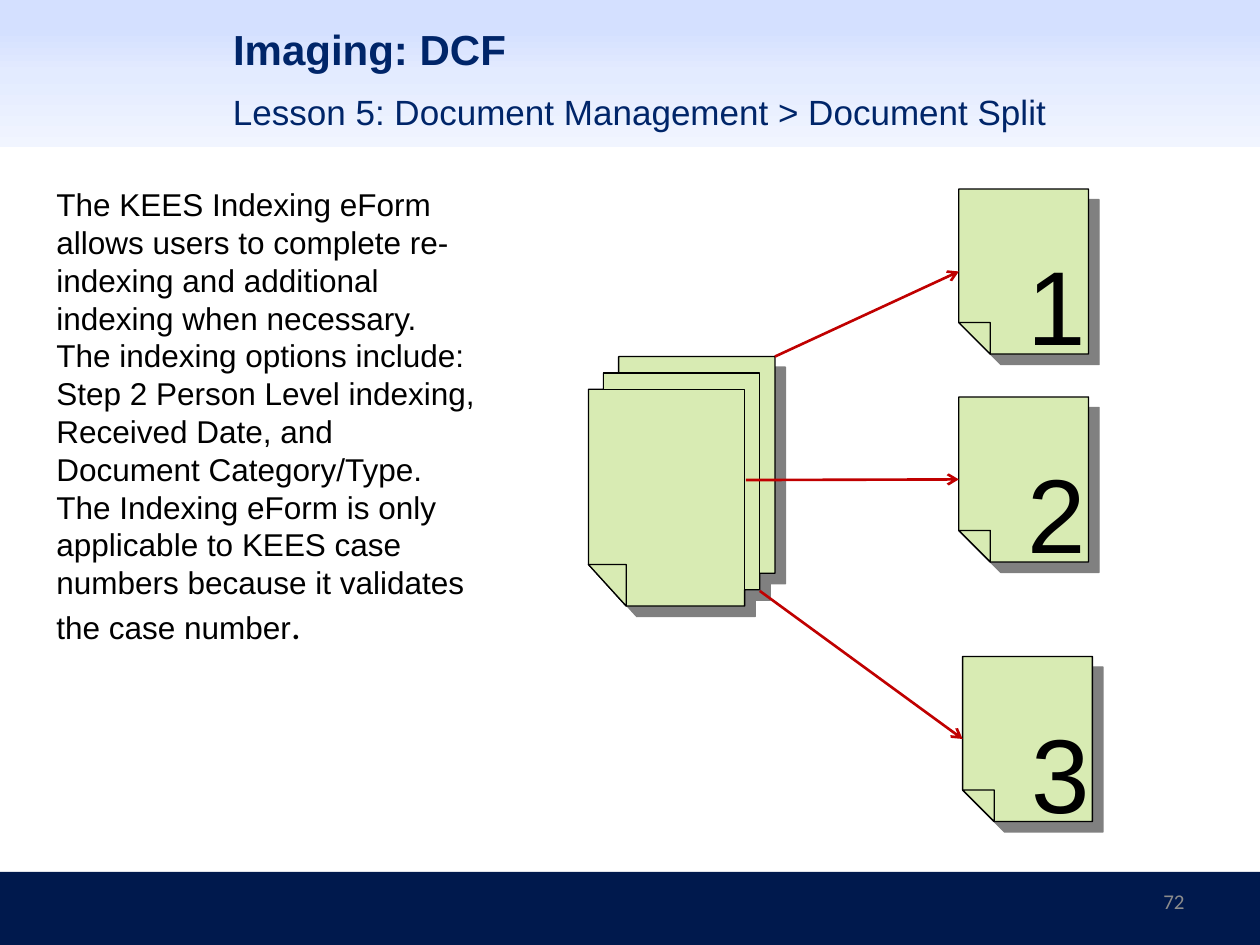
import copy

import pptx
import pptx.dml.color
import pptx.enum.shapes
import pptx.enum.text
import pptx.oxml
import pptx.oxml.ns
import pptx.util
from pptx.util import Inches

RGBColor = pptx.dml.color.RGBColor
ANCHOR = pptx.enum.text.MSO_ANCHOR
ALIGN = pptx.enum.text.PP_ALIGN
RECTANGLE = pptx.enum.shapes.MSO_SHAPE.RECTANGLE
STRAIGHT = pptx.enum.shapes.MSO_CONNECTOR.STRAIGHT

NAVY = RGBColor(0x00, 0x19, 0x4D)
TITLE_BLUE = RGBColor(0x00, 0x25, 0x69)
GREY = RGBColor(0x8C, 0x8C, 0x8C)
BLACK = RGBColor(0x00, 0x00, 0x00)
PAPER_GREEN = RGBColor(0xD8, 0xEB, 0xB3)
ARROW_RED = RGBColor(0xC0, 0x00, 0x00)
HEADER_STOPS = [
    (0.2, RGBColor(0xD4, 0xE0, 0xFF)),
    (0.5, RGBColor(0xE3, 0xEB, 0xFF)),
    (1.0, RGBColor(0xF1, 0xF5, 0xFF)),
]

EXPLANATION = (
    "The KEES Indexing eForm allows users to complete re-indexing and additional "
    "indexing when necessary. The indexing options include: Step 2 Person Level "
    "indexing, Received Date, and Document Category/Type. The Indexing eForm is only "
    "applicable to KEES case numbers because it validates the case number"
)


def drawing_element(xml):
    """Return an element of the drawing namespace parsed from its XML."""
    tag, rest = xml[1:].split(" ", 1)
    return pptx.oxml.parse_xml(f"<{tag} {pptx.oxml.ns.nsdecls('a')} {rest}")


def write_text(frame, text, size, color=BLACK, font="Arial", bold=False,
               align=ALIGN.LEFT, anchor=ANCHOR.TOP):
    """Append a formatted run to the first paragraph of a text frame."""
    frame.word_wrap = True
    frame.vertical_anchor = anchor
    paragraph = frame.paragraphs[0]
    paragraph.alignment = align
    run = paragraph.add_run()
    run.text = text
    run.font.size = pptx.util.Pt(size)
    run.font.name = font
    run.font.bold = bold
    run.font.color.rgb = color


def add_text(slide, box, text, **text_format):
    """Add a text box with one formatted run and return its frame."""
    frame = slide.shapes.add_textbox(*map(Inches, box)).text_frame
    write_text(frame, text, **text_format)
    return frame


def add_band(slide, box):
    """Add a borderless, shadowless band and return it."""
    band = slide.shapes.add_shape(RECTANGLE, *map(Inches, box))
    band.line.fill.background()
    band.shadow.inherit = False
    return band


def add_footer(slide, box):
    """Place the dark footer band and its page number."""
    left, top, width, height = box
    band = add_band(slide, box)
    band.fill.solid()
    band.fill.fore_color.rgb = NAVY
    add_text(slide, (left + width - 2.83, top + 0.03, 2.33, 0.4), "72", size=12,
             color=GREY, font="Calibri", align=ALIGN.RIGHT, anchor=ANCHOR.MIDDLE)


def add_header(slide, box):
    """Place the gradient header band, the title and the lesson line."""
    left, top = box[:2]
    band = add_band(slide, box)
    band.fill.gradient()
    band.fill.gradient_angle = 270
    stop_list = band.element.spPr.find(".//" + pptx.oxml.ns.qn("a:gsLst"))
    stop_list.append(copy.deepcopy(stop_list[0]))
    for stop, (position, color) in zip(band.fill.gradient_stops, HEADER_STOPS):
        stop.position = position
        stop.color.rgb = color

    title = slide.shapes.title
    title.left, title.top = Inches(left + 1.75), Inches(top + 0.08)
    title.width, title.height = Inches(7.75), Inches(0.62)
    write_text(title.text_frame, "Imaging: DCF", size=24, color=TITLE_BLUE,
               bold=True, anchor=ANCHOR.MIDDLE)
    title.element.getparent().append(title.element)
    add_text(slide, (left + 1.75, top + 0.67, 8.08, 0.5),
             "Lesson 5: Document Management > Document Split",
             size=20, color=TITLE_BLUE)


def add_explanation(slide, box):
    """Place the explanatory paragraph."""
    frame = add_text(slide, box, EXPLANATION, size=18)
    write_text(frame, ".", size=22, font="Calibri")


def add_paper(slide, origin, points, shadow=False):
    """Draw one closed paper outline from points relative to its origin."""
    corners = [(Inches(origin[0] + x), Inches(origin[1] + y)) for x, y in points]
    builder = slide.shapes.build_freeform(*corners[0])
    builder.add_line_segments(corners[1:], close=True)
    paper = builder.convert_to_shape()
    paper.fill.solid()
    paper.fill.fore_color.rgb = PAPER_GREEN
    paper.line.color.rgb = BLACK
    paper.line.width = pptx.util.Pt(0.75)
    paper.shadow.inherit = False
    if shadow:
        effects = paper.element.spPr.find(pptx.oxml.ns.qn("a:effectLst"))
        effects.append(drawing_element(
            '<a:outerShdw dist="107950" dir="2700000" algn="ctr" rotWithShape="0">'
            '<a:srgbClr val="808080"/></a:outerShdw>'))


def add_fold(slide, origin, height, fold_width, fold_height):
    """Draw the folded lower left corner of a page."""
    crease = height - fold_height
    add_paper(slide, origin, [(0, crease), (fold_width, crease), (fold_width, height)])


def add_numbered_page(slide, box, number):
    """Place a page with a folded corner and a large number."""
    left, top, width, height = box
    fold = 0.25
    add_paper(slide, (left, top),
              [(0, 0), (width, 0), (width, height), (fold, height), (0, height - fold)],
              shadow=True)
    add_fold(slide, (left, top), height, fold, fold)
    add_text(slide, (left + 0.45, top + 0.35, 0.4, 1.11), number, size=60,
             anchor=ANCHOR.BOTTOM)


def add_page_stack(slide, box):
    """Place a stack of three pages, the front one with a folded corner."""
    left, top, width, height = box
    step_x, step_y = 0.12, 0.13
    fold_width, fold_height = 0.3, 0.33
    front_right, middle_right = width - 2 * step_x, width - step_x
    middle_bottom, back_bottom = height - step_y, height - 2 * step_y
    add_paper(slide, (left, top), [
        (0, height - fold_height), (0, 2 * step_y), (step_x, 2 * step_y),
        (step_x, step_y), (2 * step_x, step_y), (2 * step_x, 0), (width, 0),
        (width, back_bottom), (middle_right, back_bottom),
        (middle_right, middle_bottom), (front_right, middle_bottom),
        (front_right, height), (fold_width, height)], shadow=True)
    add_paper(slide, (left, top), [
        (step_x, step_y), (middle_right, step_y), (middle_right, middle_bottom),
        (front_right, middle_bottom), (front_right, 2 * step_y), (step_x, 2 * step_y)])
    add_fold(slide, (left, top), height, fold_width, fold_height)


def add_arrow(slide, start, end):
    """Draw a red arrow between two points."""
    arrow = slide.shapes.add_connector(STRAIGHT, *map(Inches, start + end))
    arrow.line.color.rgb = ARROW_RED
    arrow.line.width = pptx.util.Pt(1.5)
    arrow.line._get_or_add_ln().append(drawing_element('<a:tailEnd type="arrow"/>'))
    arrow.element.spPr.append(drawing_element("<a:effectLst />"))


def add_split_diagram(slide, box):
    """Place the page stack, the three pages it splits into and the arrows."""
    left, top = box[:2]
    page_width, page_height = 1.03, 1.31
    pages = [(left + 2.94, top), (left + 2.94, top + 1.65), (left + 2.97, top + 3.71)]
    starts = [(left + 1.48, top + 1.33), (left + 1.25, top + 2.31),
              (left + 1.36, top + 3.19)]
    add_page_stack(slide, (left, top + 1.33, 1.48, 1.98))
    for number, (page_left, page_top) in enumerate(pages, 1):
        add_numbered_page(slide, (page_left, page_top, page_width, page_height),
                          str(number))
    for start, (page_left, page_top) in zip(starts, pages):
        add_arrow(slide, start, (page_left, page_top + page_height / 2))


def main():
    """Build the slide and save it."""
    deck = pptx.Presentation()
    deck.slide_width, deck.slide_height = Inches(10), Inches(7.5)
    slide = deck.slides.add_slide(deck.slide_layouts.get_by_name("Title Only"))
    add_footer(slide, (0, 6.92, 10, 0.58))
    add_header(slide, (0, 0, 10, 1.17))
    add_explanation(slide, (0.35, 1.42, 3.54, 5.42))
    add_split_diagram(slide, (4.67, 1.5, 4, 5.02))
    deck.save("out.pptx")


if __name__ == "__main__":
    main()
